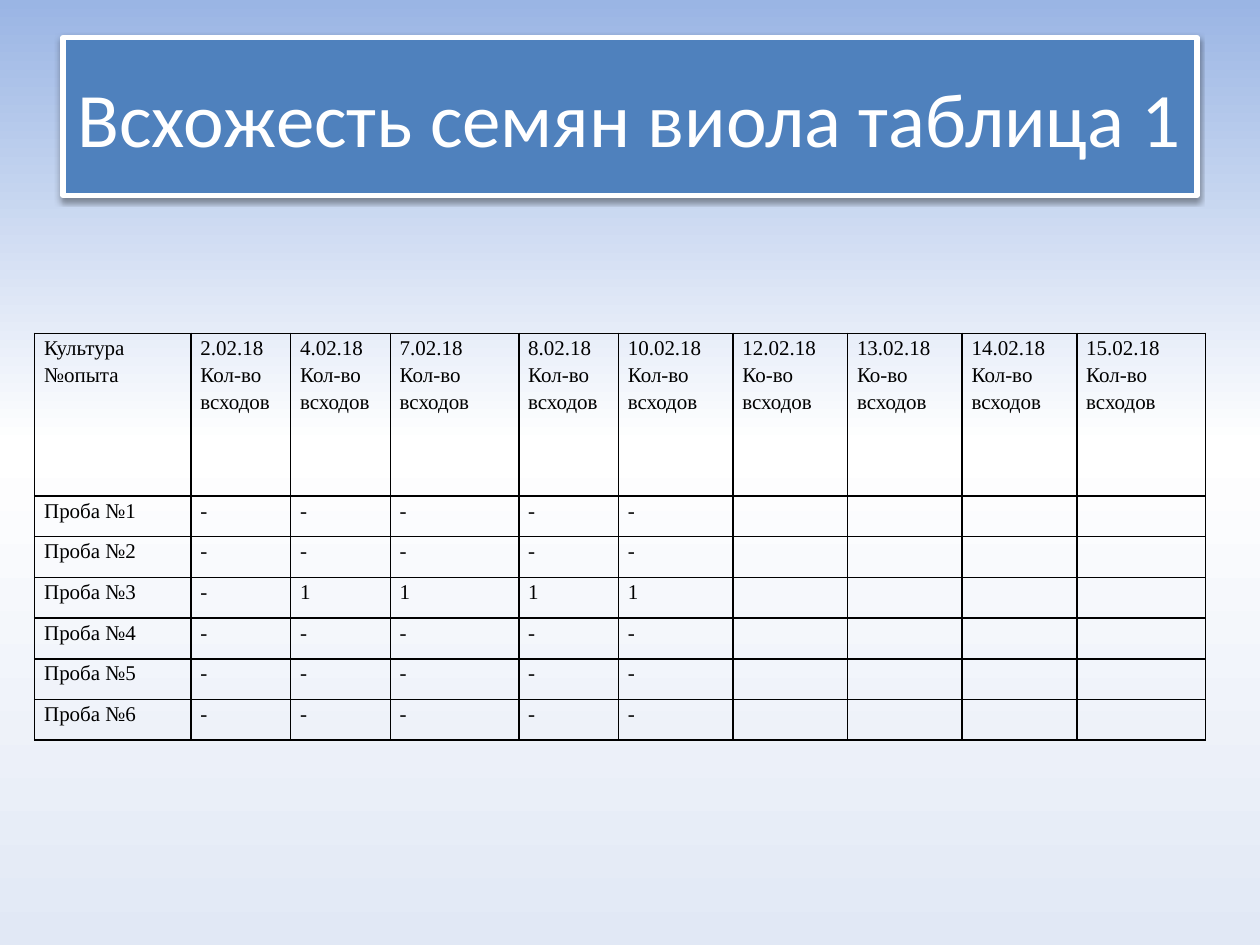
from dataclasses import dataclass

from lxml import etree
from pptx import Presentation
from pptx import util as u
from pptx.dml.color import RGBColor
from pptx.enum import text
from pptx.oxml import ns


@dataclass(frozen=True)
class Theme:
    title_fill: str = "4F81BD"
    title_text: str = "FFFFFF"
    ink: str = "000000"
    title_font: str = "Calibri"
    table_font: str = "Times New Roman"
    title_size: int = 44
    table_size: int = 12
    frame_width: float = 3
    rule_width: float = 1
    # position %, colour, opacity %
    backdrop: tuple = ((0, "9AB5E4", 100), (47, "FFFFFF", 89), (100, "E1E8F5", 100))


def set_attributes(target, values):
    for name, value in values.items():
        setattr(target, name, value)


def add_node(parent, tag, **attributes):
    values = {name: str(value) for name, value in attributes.items()}
    return etree.SubElement(parent, ns.qn(tag), values)


def add_color(parent, color, opacity=100):
    node = add_node(parent, "a:srgbClr", val=color)
    if opacity < 100:
        add_node(node, "a:alpha", val=opacity * 1000)


class SlideBuilder:
    def __init__(self, deck, theme):
        self.theme = theme
        self.slide = deck.slides.add_slide(deck.slide_layouts[5])

    def format_font(self, font, name, size, color):
        set_attributes(font, {"name": name, "size": u.Pt(size)})
        font.color.rgb = RGBColor.from_string(color)

    def backdrop(self):
        fill = self.slide.background.fill
        fill.gradient()
        fill.gradient_angle = 270
        stops = self.slide.element.find(".//" + ns.qn("a:gsLst"))
        for stop in list(stops):
            stops.remove(stop)
        for position, color, opacity in self.theme.backdrop:
            add_color(add_node(stops, "a:gs", pos=position * 1000), color, opacity)

    def title(self, wording, left, top, width, height):
        theme, box = self.theme, self.slide.shapes.title
        set_attributes(box, {"left": u.Cm(left), "top": u.Cm(top),
                             "width": u.Cm(width), "height": u.Cm(height)})
        box.fill.solid()
        box.fill.fore_color.rgb = RGBColor.from_string(theme.title_fill)
        box.line.color.rgb = RGBColor.from_string(theme.title_text)
        box.line.width = u.Pt(theme.frame_width)
        effects = add_node(box.element.spPr, "a:effectLst")
        shadow = add_node(effects, "a:outerShdw", blurRad=u.Pt(3.1), dist=u.Pt(1.6),
                          dir=90 * 60000, rotWithShape=0)
        add_color(shadow, theme.ink, 38)

        frame = box.text_frame
        set_attributes(frame, {"word_wrap": True,
                               "auto_size": text.MSO_AUTO_SIZE.NONE,
                               "vertical_anchor": text.MSO_ANCHOR.MIDDLE})
        para = frame.paragraphs[0]
        para.alignment = text.PP_ALIGN.CENTER
        span = para.add_run()
        span.text = wording
        self.format_font(span.font, theme.title_font, theme.title_size, theme.title_text)

    def cell(self, cell, wording):
        """Fill one ruled, transparent cell; each line becomes a paragraph."""
        theme = self.theme
        set_attributes(cell, {"margin_left": u.Cm(0.19), "margin_right": u.Cm(0.19),
                              "margin_top": 0, "margin_bottom": 0})
        properties = cell._tc.get_or_add_tcPr()
        for side in ("a:lnL", "a:lnR", "a:lnT", "a:lnB"):
            border = add_node(properties, side, w=u.Pt(theme.rule_width))
            add_color(add_node(border, "a:solidFill"), theme.ink)
        cell.fill.background()
        if not wording:
            return
        cell.text_frame.text = wording
        for para in cell.text_frame.paragraphs:
            set_attributes(para, {"alignment": text.PP_ALIGN.JUSTIFY,
                                  "line_spacing": 1.15})
            for span in para.runs:
                self.format_font(span.font, theme.table_font, theme.table_size, theme.ink)

    def table(self, rows, left, top, widths, heights):
        table = self.slide.shapes.add_table(
            len(rows), len(widths), u.Cm(left), u.Cm(top),
            u.Cm(sum(widths)), u.Cm(sum(heights))).table
        set_attributes(table, {"first_row": False, "horz_banding": False})
        for column, width in zip(table.columns, widths):
            column.width = u.Cm(width)
        for row, height, wordings in zip(table.rows, heights, rows):
            row.height = u.Cm(height)
            for cell, wording in zip(row.cells, wordings):
                self.cell(cell, wording)


def germination_rows():
    days = (2, 4, 7, 8, 10, 12, 13, 14, 15)
    header = ["Культура\n№опыта"]
    for day in days:
        count = "Ко-во" if day in (12, 13) else "Кол-во"
        header.append(f"{day}.02.18\n{count}\nвсходов")
    rows = [header]
    for sample in range(1, 7):
        counts = "-1111" if sample == 3 else "-----"
        unfilled = [""] * (len(days) - len(counts))
        rows.append([f"Проба №{sample}", *counts, *unfilled])
    return rows


def main():
    deck = Presentation()
    set_attributes(deck, {"slide_width": u.Cm(25.4), "slide_height": u.Cm(19.05)})
    page = SlideBuilder(deck, Theme())
    page.backdrop()
    page.title("Всхожесть семян виола таблица 1", 1.27, 0.76, 22.86, 3.18)
    page.table(germination_rows(), 0.7, 6.72,
               widths=[3.15, 2.01, 2.01, 2.59, 2.01] + [2.31] * 4 + [2.59],
               heights=[3.28] + [0.82] * 6)
    deck.save("out.pptx")


if __name__ == "__main__":
    main()
